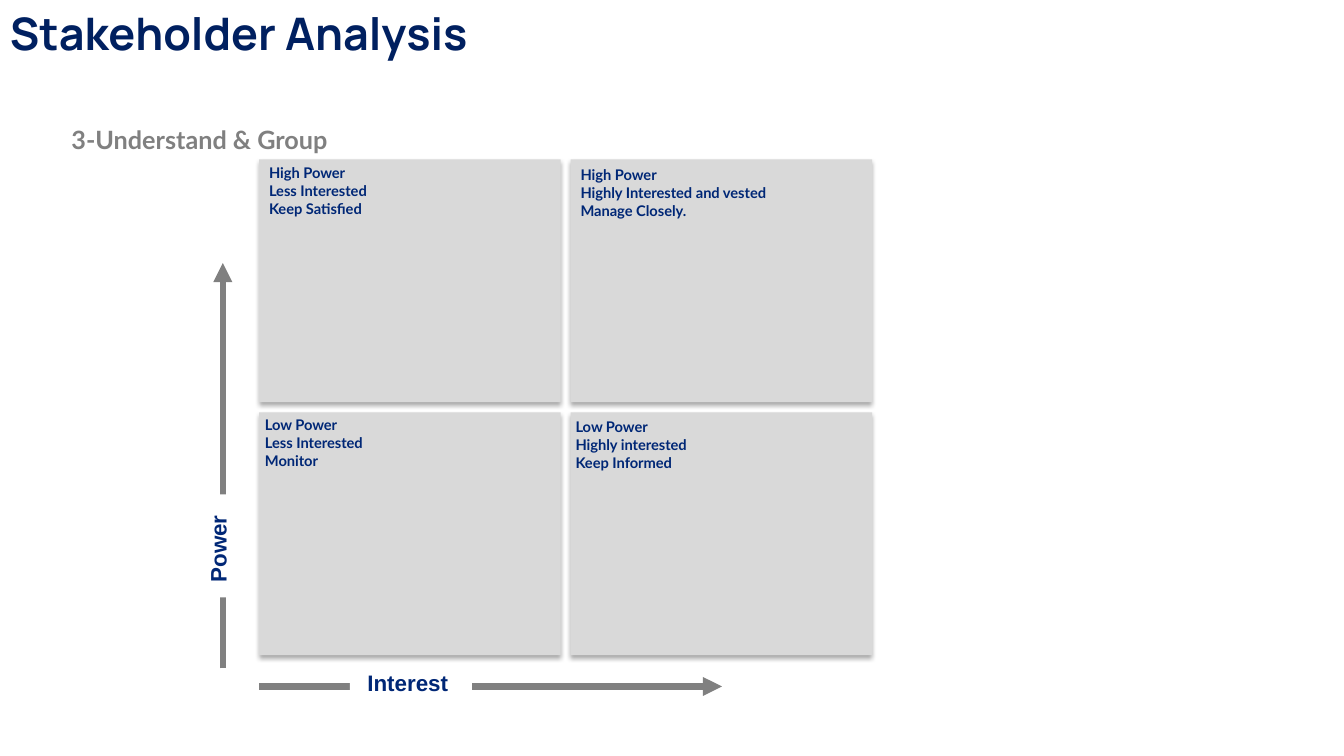
from lxml import etree
from pptx import Presentation
from pptx.dml.color import RGBColor
from pptx.enum.shapes import MSO_CONNECTOR, MSO_SHAPE
from pptx.enum.text import MSO_ANCHOR, PP_ALIGN
from pptx.oxml import parse_xml
from pptx.oxml.ns import qn
from pptx.util import Inches, Pt

# Content
NAVY, BLUE, GRAY, LIGHT, WHITE = "002060", "002776", "808080", "D9D9D9", "FFFFFF"
# text, left, top, width, height, font, size, colour
HEADINGS = [
    ("Stakeholder Analysis", 0, 0, 8.61, 0.64, "Manrope", 32, NAVY),
    ("3-Understand & Group", 0.61, 1.18, 3.61, 0.4, "Lato", 18, GRAY),
]
# row, column, lines, text offset from the cell, text size
QUADRANTS = [
    (0, 0, ["High Power", "Less Interested", "Keep Satisfied"], (0, 0), (2.54, 0.63)),
    (0, 1, ["High Power", "Highly Interested and vested", "Manage Closely."], (0, 0.02), (2.99, 0.81)),
    (1, 0, ["Low Power", "Less Interested", "Monitor"], (-0.04, -0.01), (2.54, 0.63)),
    (1, 1, ["Low Power", "Highly interested", "Keep Informed"], (-0.05, 0.01), (2.99, 0.81)),
]
# label, label box, rotation, axis start, axis end
AXES = [
    ("Power ", (1.65, 5.23, 1.02, 0.37), 270, (2.21, 6.63), (2.21, 2.61)),
    ("Interest ", (3.47, 6.59, 1.21, 0.37), 0, (2.57, 6.81), (7.16, 6.81)),
]

# Grid
GRID_LEFT, GRID_TOP = 2.57, 1.58
CELL_WIDTH, CELL_HEIGHT = 2.99, 2.41
GAP = 0.1

SHADOW = (
    '<a:outerShdw xmlns:a="http://schemas.openxmlformats.org/drawingml/2006/main"'
    ' blurRad="44450" dist="27940" dir="5400000" algn="ctr">'
    '<a:srgbClr val="000000"><a:alpha val="32000"/></a:srgbClr></a:outerShdw>'
)

presentation = Presentation()
presentation.slide_width, presentation.slide_height = Inches(13.33), Inches(7.5)
slide = presentation.slides.add_slide(presentation.slide_layouts[6])


def color(hex_string):
    return RGBColor.from_string(hex_string)


def inches(values):
    return [Inches(value) for value in values]


def write(shape, lines, font, size, text_color, align=PP_ALIGN.LEFT, anchor=MSO_ANCHOR.TOP):
    frame = shape.text_frame
    frame.word_wrap = True
    frame.vertical_anchor = anchor
    frame.text = "\n".join(lines)
    for paragraph in frame.paragraphs:
        paragraph.alignment = align
        paragraph.font.name = font
        paragraph.font.size = Pt(size)
        paragraph.font.bold = True
        paragraph.font.color.rgb = color(text_color)


def add_rectangle(box, fill):
    shape = slide.shapes.add_shape(MSO_SHAPE.RECTANGLE, *inches(box))
    shape.shadow.inherit = False
    shape.fill.solid()
    shape.fill.fore_color.rgb = color(fill)
    shape.line.fill.background()
    return shape


def add_arrow(start, end):
    arrow = slide.shapes.add_connector(MSO_CONNECTOR.STRAIGHT, *inches(start + end))
    arrow.line.color.rgb = color(GRAY)
    arrow.line.width = Pt(4.5)
    etree.SubElement(arrow.line._get_or_add_ln(), qn("a:tailEnd"), type="triangle")
    etree.SubElement(arrow._element.spPr, qn("a:effectLst"))


# Axes, with each label covering part of its arrow
for label, box, rotation, start, end in AXES:
    add_arrow(start, end)
    label_box = add_rectangle(box, WHITE)
    label_box.rotation = rotation
    write(label_box, [label], "Arial", 16, BLUE, PP_ALIGN.CENTER)

# Headings
for text, left, top, width, height, font, size, text_color in HEADINGS:
    heading = slide.shapes.add_textbox(*inches((left, top, width, height)))
    write(heading, [text], font, size, text_color, anchor=MSO_ANCHOR.MIDDLE)

# Quadrants
for row, column, lines, (shift_x, shift_y), text_size in QUADRANTS:
    left = GRID_LEFT + column * (CELL_WIDTH + GAP)
    top = GRID_TOP + row * (CELL_HEIGHT + GAP)
    cell = add_rectangle((left, top, CELL_WIDTH, CELL_HEIGHT), LIGHT)
    cell._element.spPr.find(qn("a:effectLst")).append(parse_xml(SHADOW))
    note = slide.shapes.add_textbox(*inches((left + shift_x, top + shift_y) + text_size))
    write(note, lines, "Lato", 10.5, BLUE)

presentation.save("out.pptx")
